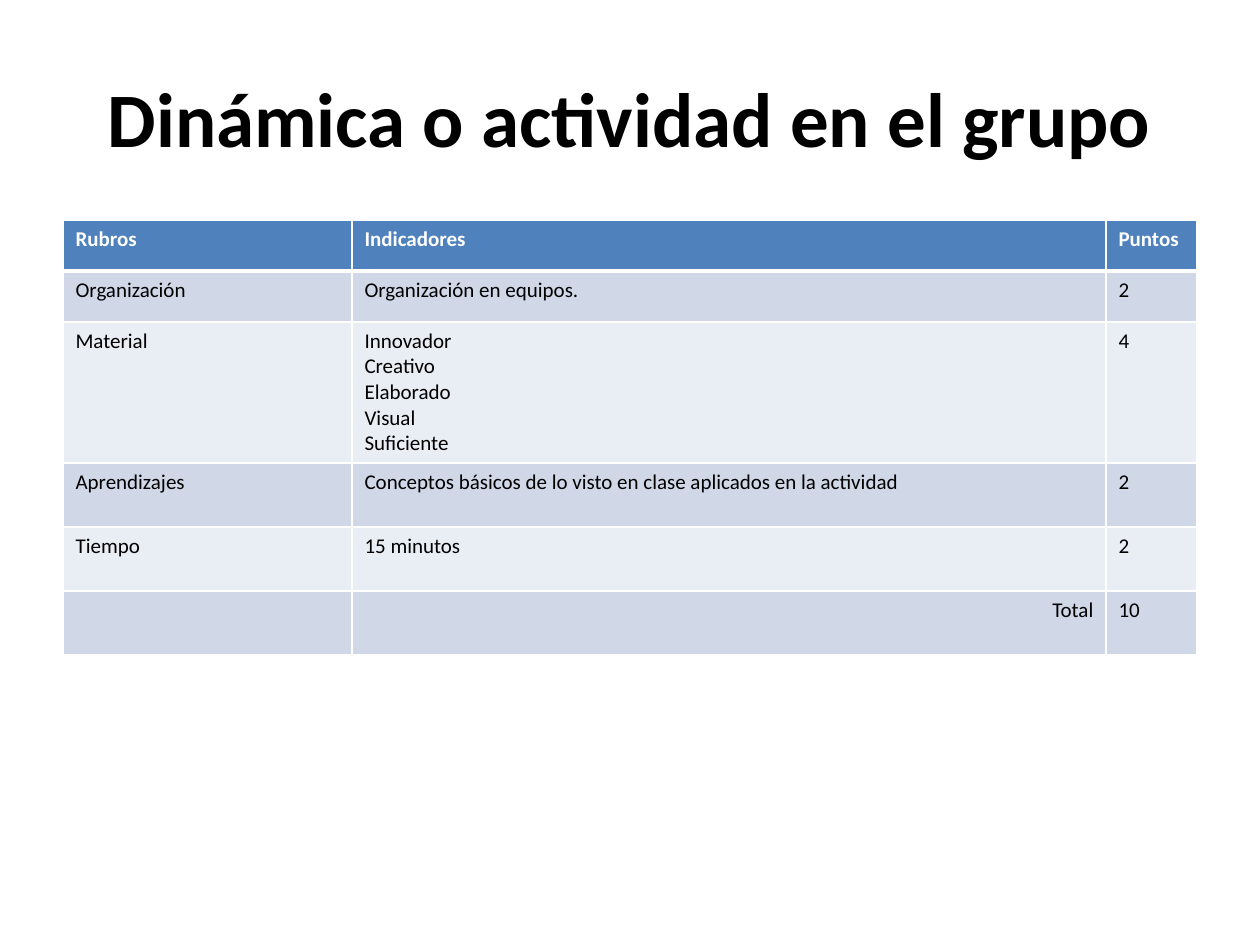
from dataclasses import dataclass

from lxml.etree import SubElement
from pptx import Presentation
from pptx.dml.color import RGBColor
from pptx.enum.text import MSO_ANCHOR as Anchor, PP_ALIGN as Align
from pptx.oxml.ns import qn
from pptx.util import Emu, Pt

EMU_PER_PX = 914400 / 126
COLORS = {
    "header": "4F81BD",
    "odd": "D0D8E8",
    "even": "E9EDF4",
    "light": "FFFFFF",
    "dark": "000000",
}
COLUMN_WIDTHS = (289, 754, 91)


@dataclass(frozen=True)
class RubricRow:
    category: str
    indicators: tuple[str, ...]
    points: str
    height: int
    indicator_align: Align = Align.LEFT


RUBRIC = (
    RubricRow("Rubros", ("Indicadores",), "Puntos", 51),
    RubricRow("Organización", ("Organización en equipos.",), "2", 51),
    RubricRow("Material", ("Innovador", "Creativo", "Elaborado", "Visual", "Suficiente"), "4", 141),
    RubricRow("Aprendizajes", ("Conceptos básicos de lo visto en clase aplicados en la actividad",), "2", 64),
    RubricRow("Tiempo", ("15 minutos",), "2", 64),
    RubricRow("", ("Total",), "10", 64, Align.RIGHT),
)


def px(length: int) -> Emu:
    return Emu(round(length * EMU_PER_PX))


def write_text(frame, lines, *, size=12, color="dark", bold=False, align=Align.LEFT) -> None:
    for index, line in enumerate(lines):
        paragraph = frame.add_paragraph() if index else frame.paragraphs[0]
        paragraph.alignment = align
        if not line:
            continue
        run = paragraph.add_run()
        run.text = line
        font = run.font
        font.name = "Calibri"
        font.size = Pt(size)
        font.bold = bold
        font.color.rgb = RGBColor.from_string(COLORS[color])


def add_borders(cell, *, top: int, bottom: int) -> None:
    properties = cell._tc.get_or_add_tcPr()
    for side, width in (("lnL", 1), ("lnR", 1), ("lnT", top), ("lnB", bottom)):
        line = SubElement(properties, qn(f"a:{side}"), w=str(Pt(width)))
        fill = SubElement(line, qn("a:solidFill"))
        SubElement(fill, qn("a:srgbClr"), val=COLORS["light"])


def draw_title(slide) -> None:
    title = slide.shapes.title
    title.left, title.top, title.width, title.height = map(px, (63, 38, 1134, 157))
    title.text_frame.vertical_anchor = Anchor.MIDDLE
    write_text(
        title.text_frame, ("Dinámica o actividad en el grupo",),
        size=44, bold=True, align=Align.CENTER,
    )


def draw_rubric(slide, rows: tuple[RubricRow, ...]) -> None:
    total_height = sum(row.height for row in rows)
    table = slide.shapes.add_table(
        len(rows), len(COLUMN_WIDTHS), px(63), px(220), px(sum(COLUMN_WIDTHS)), px(total_height)
    ).table
    for column, width in zip(table.columns, COLUMN_WIDTHS):
        column.width = px(width)
    for index, row in enumerate(rows):
        table.rows[index].height = px(row.height)
        is_header = index == 0
        band = "header" if is_header else "odd" if index % 2 else "even"
        contents = (
            ((row.category,), Align.LEFT),
            (row.indicators, row.indicator_align),
            ((row.points,), Align.LEFT),
        )
        for cell, (lines, align) in zip(table.rows[index].cells, contents):
            add_borders(cell, top=3 if index == 1 else 1, bottom=3 if is_header else 1)
            cell.fill.solid()
            cell.fill.fore_color.rgb = RGBColor.from_string(COLORS[band])
            write_text(
                cell.text_frame, lines,
                color="light" if is_header else "dark", bold=is_header, align=align,
            )


def main() -> None:
    deck = Presentation()
    deck.slide_width, deck.slide_height = px(1260), px(945)
    slide = deck.slides.add_slide(deck.slide_layouts[5])
    draw_title(slide)
    draw_rubric(slide, RUBRIC)
    deck.save("out.pptx")


if __name__ == "__main__":
    main()
